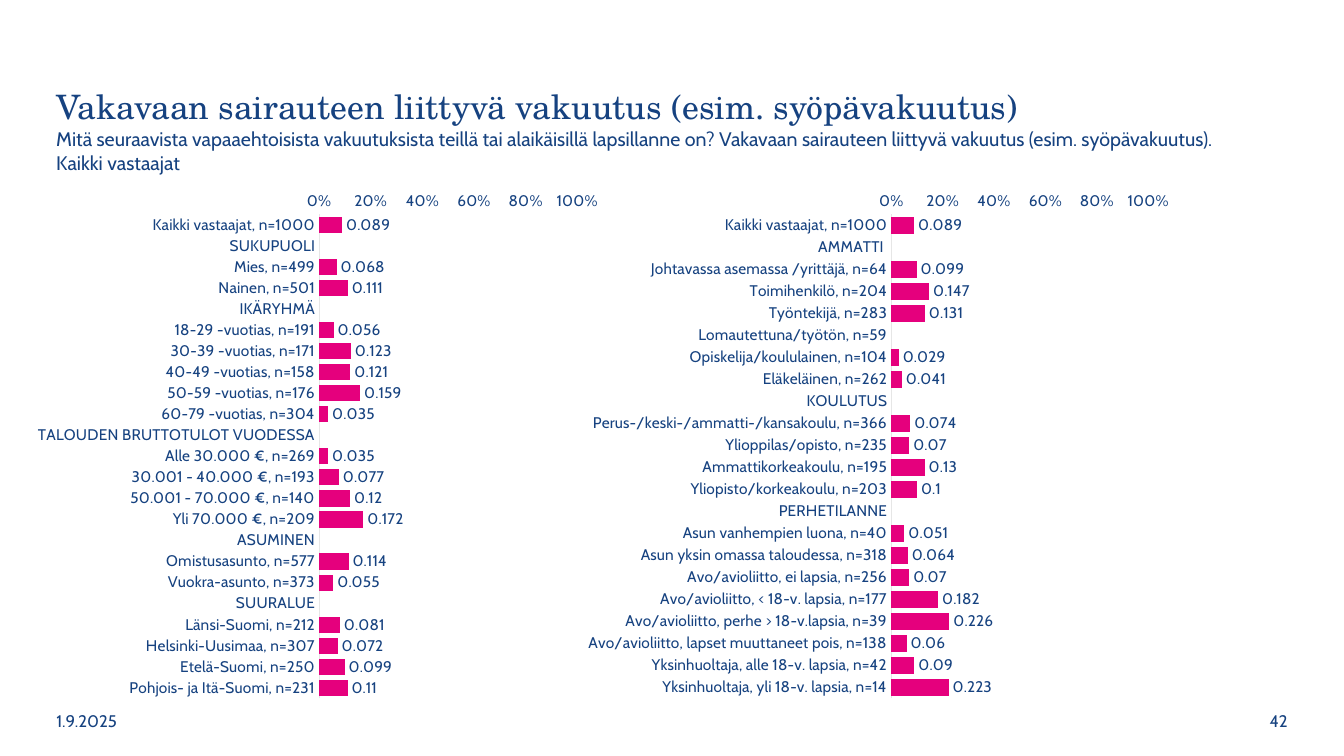
from pptx import Presentation
from pptx.chart.data import CategoryChartData
from pptx.dml.color import RGBColor
from pptx.enum.chart import (XL_AXIS_CROSSES, XL_CHART_TYPE, XL_LABEL_POSITION,
                             XL_TICK_MARK)
from pptx.enum.text import MSO_ANCHOR, MSO_AUTO_SIZE, PP_ALIGN
from pptx.oxml import parse_xml
from pptx.oxml.ns import nsdecls, qn
from pptx.util import Inches, Pt

NAVY = RGBColor(0x16, 0x42, 0x80)
PINK = RGBColor(0xE5, 0x00, 0x7D)
PALE_GREY = RGBColor(0xE6, 0xE6, 0xE6)
TITLE_FONT, BODY_FONT = "TeX Gyre Schola", "Cabin"

TITLE = "Vakavaan sairauteen liittyvä vakuutus (esim. syöpävakuutus)"
QUESTION = ("Mitä seuraavista vapaaehtoisista vakuutuksista teillä tai alaikäisillä "
            "lapsillanne on? Vakavaan sairauteen liittyvä vakuutus "
            "(esim. syöpävakuutus). Kaikki vastaajat")
DATE, PAGE_NUMBER = "1.9.2025", "42"

BACKGROUND_ROWS = [
    ("Kaikki vastaajat, n=1000", 0.089),
    ("SUKUPUOLI", None),
    ("Mies, n=499", 0.068),
    ("Nainen, n=501", 0.111),
    ("IKÄRYHMÄ", None),
    ("18-29 -vuotias, n=191", 0.056),
    ("30-39 -vuotias, n=171", 0.123),
    ("40-49 -vuotias, n=158", 0.121),
    ("50-59 -vuotias, n=176", 0.159),
    ("60-79 -vuotias, n=304", 0.035),
    ("TALOUDEN BRUTTOTULOT VUODESSA", None),
    ("Alle 30.000 €, n=269", 0.035),
    ("30.001 - 40.000 €, n=193", 0.077),
    ("50.001 - 70.000 €, n=140", 0.12),
    ("Yli 70.000 €, n=209", 0.172),
    ("ASUMINEN", None),
    ("Omistusasunto, n=577", 0.114),
    ("Vuokra-asunto, n=373", 0.055),
    ("SUURALUE", None),
    ("Länsi-Suomi, n=212", 0.081),
    ("Helsinki-Uusimaa, n=307", 0.072),
    ("Etelä-Suomi, n=250", 0.099),
    ("Pohjois- ja Itä-Suomi, n=231", 0.11),
]
LIFE_SITUATION_ROWS = [
    ("Kaikki vastaajat, n=1000", 0.089),
    ("AMMATTI ", None),
    ("Johtavassa asemassa /yrittäjä, n=64", 0.099),
    ("Toimihenkilö, n=204", 0.147),
    ("Työntekijä, n=283", 0.131),
    ("Lomautettuna/työtön, n=59", None),
    ("Opiskelija/koululainen, n=104", 0.029),
    ("Eläkeläinen, n=262", 0.041),
    ("KOULUTUS", None),
    ("Perus-/keski-/ammatti-/kansakoulu, n=366", 0.074),
    ("Ylioppilas/opisto, n=235", 0.07),
    ("Ammattikorkeakoulu, n=195", 0.13),
    ("Yliopisto/korkeakoulu, n=203", 0.1),
    ("PERHETILANNE", None),
    ("Asun vanhempien luona, n=40", 0.051),
    ("Asun yksin omassa taloudessa, n=318", 0.064),
    ("Avo/avioliitto, ei lapsia, n=256", 0.07),
    ("Avo/avioliitto, < 18-v. lapsia, n=177", 0.182),
    ("Avo/avioliitto, perhe > 18-v.lapsia, n=39", 0.226),
    ("Avo/avioliitto, lapset muuttaneet pois, n=138", 0.06),
    ("Yksinhuoltaja, alle 18-v. lapsia, n=42", 0.09),
    ("Yksinhuoltaja, yli 18-v. lapsia, n=14", 0.223),
]
# Rows, chart left in inches, plot left and plot width as shares of the chart
CHARTS = [(BACKGROUND_ROWS, 0.29, 0.439, 0.391),
          (LIFE_SITUATION_ROWS, 5.73, 0.475, 0.389)]
PLOT_TOP, PLOT_HEIGHT = 0.062, 0.861


def style_font(font, size, name=BODY_FONT):
    font.size, font.name = Pt(size), name
    font.color.rgb = NAVY


def write(box, text, size, anchor, align=PP_ALIGN.LEFT, name=BODY_FONT):
    frame = box.text_frame
    frame.text = text
    frame.word_wrap = True
    frame.vertical_anchor = anchor
    para = frame.paragraphs[0]
    para.alignment = align
    style_font(para.runs[0].font, size, name)
    return para


def add_text(page, place, *style):
    box = page.shapes.add_textbox(*map(Inches, place))
    write(box, *style)
    return box


def set_plot_area(chart, left, width):
    """Fix the inner plot area, given as shares of the chart."""
    plot_area = chart._chartSpace.chart.plotArea
    for layout in plot_area.findall(qn("c:layout")):
        plot_area.remove(layout)
    shares = {"x": left, "y": PLOT_TOP, "w": width, "h": PLOT_HEIGHT}
    tags = '<c:layoutTarget val="inner"/><c:xMode val="edge"/><c:yMode val="edge"/>'
    tags += "".join(f'<c:{key} val="{share}"/>' for key, share in shares.items())
    plot_area.insert(0, parse_xml(
        f'<c:layout {nsdecls("c")}><c:manualLayout>{tags}</c:manualLayout></c:layout>'))


def add_bar_chart(page, rows, left, plot_left, plot_width):
    data = CategoryChartData()
    data.categories = [label for label, _ in rows]
    data.add_series("Series 1", [share for _, share in rows])
    chart = page.shapes.add_chart(
        XL_CHART_TYPE.BAR_CLUSTERED, Inches(left), Inches(1.78),
        Inches(6.55), Inches(5.58), data).chart
    chart.has_legend = chart.has_title = False
    style_font(chart.font, 11)
    set_plot_area(chart, plot_left, plot_width)

    categories, values = chart.category_axis, chart.value_axis
    for axis in (categories, values):
        axis.major_tick_mark = axis.minor_tick_mark = XL_TICK_MARK.NONE
        axis.has_major_gridlines = False
    categories.reverse_order = True
    categories.crosses = XL_AXIS_CROSSES.MAXIMUM
    categories.format.line.color.rgb = PALE_GREY
    categories.format.line.width = Pt(0.75)
    values.minimum_scale, values.maximum_scale, values.major_unit = 0, 1, 0.2
    values.tick_labels.number_format = "0%"
    values.tick_labels.number_format_is_linked = False
    values.format.line.fill.background()

    plot = chart.plots[0]
    plot.gap_width = 30
    plot.vary_by_categories = False
    plot.has_data_labels = True
    plot.data_labels.show_value = True
    plot.data_labels.position = XL_LABEL_POSITION.OUTSIDE_END
    fill = plot.series[0].format.fill
    fill.solid()
    fill.fore_color.rgb = PINK


def main():
    deck = Presentation()
    deck.slide_width, deck.slide_height = Inches(13.33), Inches(7.5)
    page = deck.slides.add_slide(deck.slide_layouts[5])

    title = page.shapes.title
    title.left, title.top, title.width, title.height = map(
        Inches, (0.46, 0.6, 11.56, 0.96))
    heading = write(title, TITLE, 24, MSO_ANCHOR.MIDDLE, PP_ALIGN.LEFT, TITLE_FONT)
    heading.line_spacing = 0.9

    add_text(page, (11.69, 6.95, 1.18, 0.4), PAGE_NUMBER, 12,
             MSO_ANCHOR.MIDDLE, PP_ALIGN.RIGHT)
    add_text(page, (0.46, 6.95, 1.18, 0.4), DATE, 12, MSO_ANCHOR.MIDDLE)
    question = add_text(page, (0.46, 1.21, 12.13, 0.57), QUESTION, 14, MSO_ANCHOR.TOP)
    question.text_frame.auto_size = MSO_AUTO_SIZE.SHAPE_TO_FIT_TEXT

    for chart in CHARTS:
        add_bar_chart(page, *chart)
    deck.save("out.pptx")


if __name__ == "__main__":
    main()
